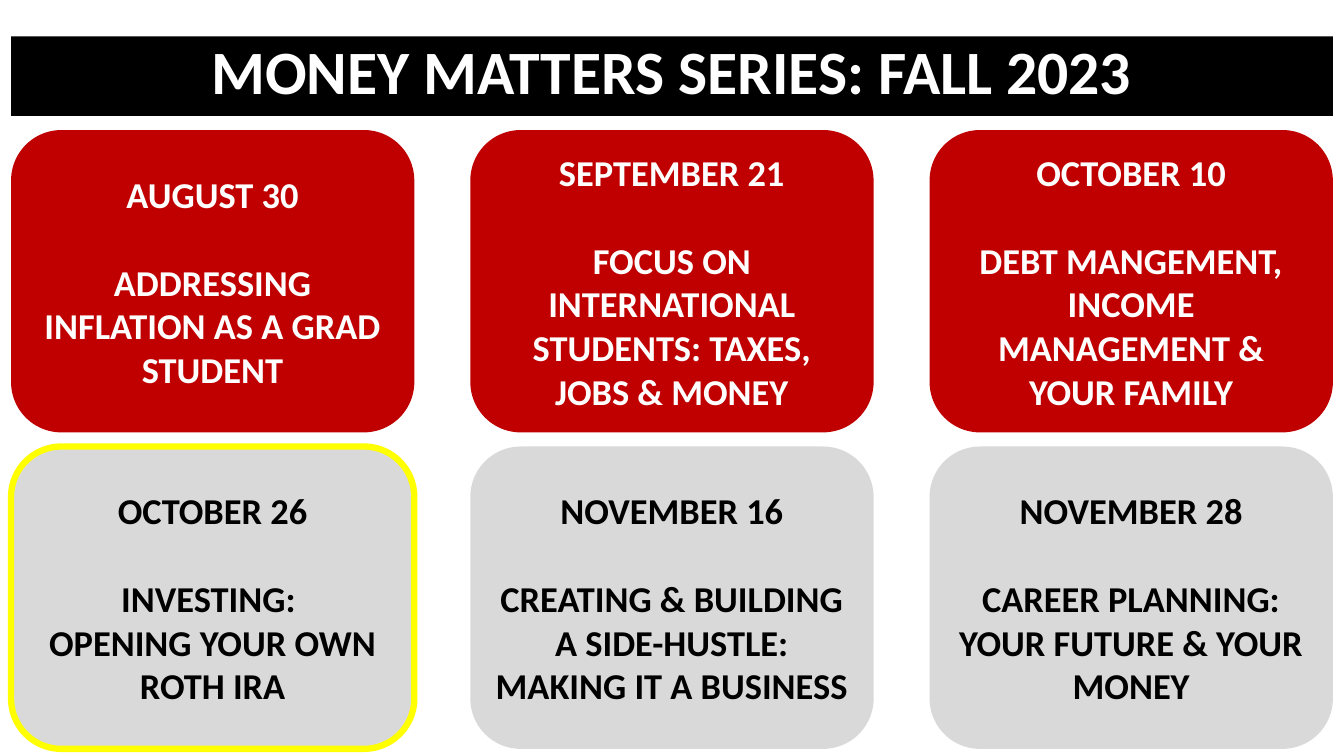
from pptx import Presentation
from pptx.dml.color import RGBColor
from pptx.enum.shapes import MSO_SHAPE
from pptx.enum.text import MSO_ANCHOR, PP_ALIGN
from pptx.util import Inches, Pt

THEME = {
    "font": "Calibri",
    "black": RGBColor(0, 0, 0),
    "white": RGBColor(255, 255, 255),
    "red": RGBColor(0xC0, 0, 0),
    "gray": RGBColor(0xD9, 0xD9, 0xD9),
    "yellow": RGBColor(255, 255, 0),
    "title": Pt(44),
    "body": Pt(26),
    "gap": Pt(31.7),
    "edge": Pt(4.5),
}

deck = Presentation()
deck.slide_width, deck.slide_height = Inches(13.33), Inches(7.5)
slide = deck.slides.add_slide(deck.slide_layouts[6])


def add_box(kind, x, y, w, h, fill, ink, size, lines):
    box = slide.shapes.add_shape(kind, Inches(x), Inches(y), Inches(w), Inches(h))
    box.shadow.inherit = False
    box.fill.solid()
    box.fill.fore_color.rgb = THEME[fill]
    box.line.fill.background()
    frame = box.text_frame
    frame.word_wrap = True
    frame.vertical_anchor = MSO_ANCHOR.MIDDLE
    frame.text = "\n".join(lines)
    for para in frame.paragraphs:
        para.alignment = PP_ALIGN.CENTER
        for run in para.runs:
            run.font.name = THEME["font"]
            run.font.size = THEME[size]
            run.font.bold = True
            run.font.color.rgb = THEME[ink]
    return box


# Title bar
left, top = 0.11, 1.29
bar = add_box(MSO_SHAPE.RECTANGLE, left, 0.36, 13.11, 0.79, "black", "white",
              "title", ["MONEY MATTERS SERIES: FALL 2023"])
bar.text_frame.vertical_anchor = MSO_ANCHOR.TOP
bar.text_frame.paragraphs[0].line_spacing = 0.9

# Session cards: past events in red, coming events in gray
wide, high = 4, 3
step_x, step_y = 4.555, 3.14
rows = [
    ("red", "white", [
        ("AUGUST 30", "ADDRESSING INFLATION AS A GRAD STUDENT"),
        ("SEPTEMBER 21", "FOCUS ON INTERNATIONAL STUDENTS: TAXES, JOBS & MONEY"),
        ("OCTOBER 10", "DEBT MANGEMENT, INCOME MANAGEMENT & YOUR FAMILY"),
    ]),
    ("gray", "black", [
        ("OCTOBER 26", "INVESTING: \vOPENING YOUR OWN ROTH IRA"),
        ("NOVEMBER 16", "CREATING & BUILDING A SIDE-HUSTLE: MAKING IT A BUSINESS"),
        ("NOVEMBER 28", "CAREER PLANNING: YOUR FUTURE & YOUR MONEY"),
    ]),
]
next_date = "OCTOBER 26"

for row, (fill, ink, events) in enumerate(rows):
    for col, (date, topic) in enumerate(events):
        card = add_box(MSO_SHAPE.ROUNDED_RECTANGLE, left + col * step_x,
                       top + row * step_y, wide, high, fill, ink, "body",
                       [date, topic])
        card.text_frame.paragraphs[1].space_before = THEME["gap"]
        # Outline the next session
        if date == next_date:
            card.line.color.rgb = THEME["yellow"]
            card.line.width = THEME["edge"]

deck.save("out.pptx")
